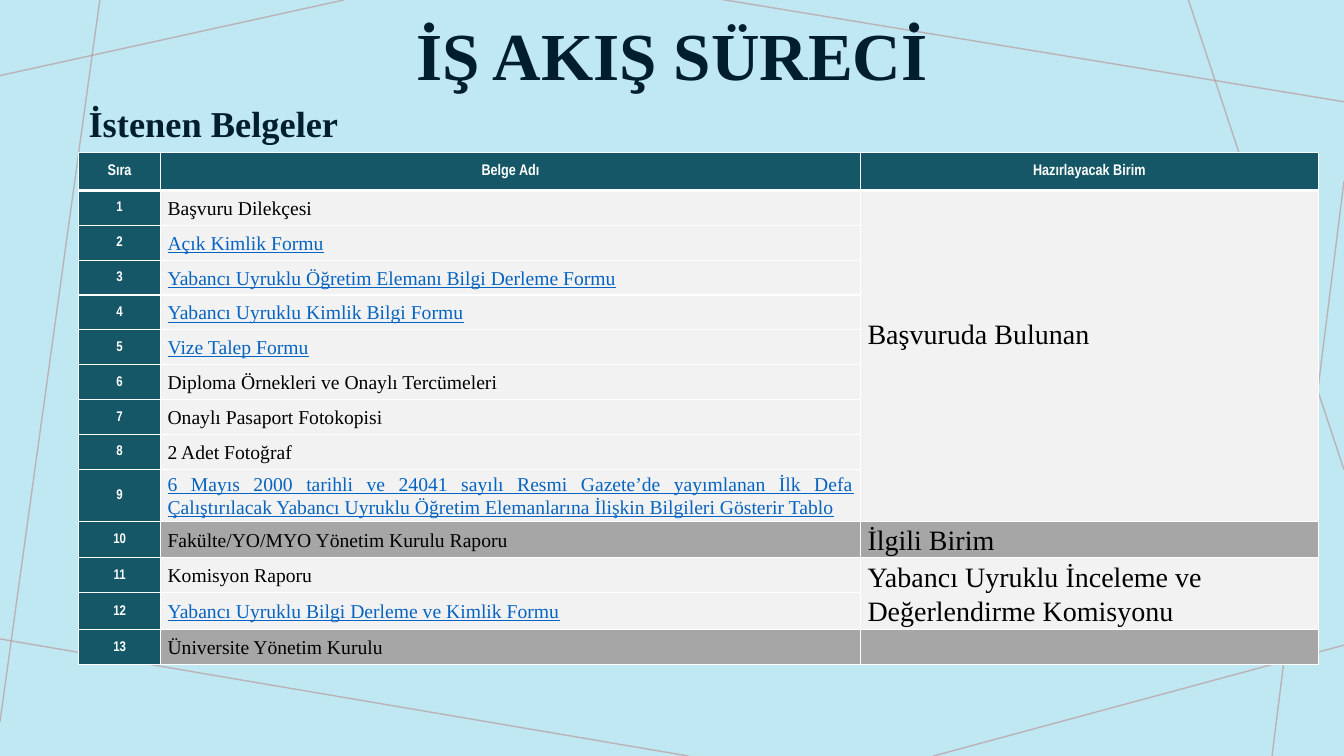
from lxml import etree
from pptx import Presentation
from pptx.dml.color import RGBColor
from pptx.enum.shapes import MSO_CONNECTOR
from pptx.enum.text import MSO_ANCHOR, MSO_AUTO_SIZE, PP_ALIGN
from pptx.oxml.ns import qn
from pptx.util import Pt

STRAIGHT = MSO_CONNECTOR.STRAIGHT
MIDDLE = MSO_ANCHOR.MIDDLE
LEFT, CENTER, JUSTIFY = PP_ALIGN.LEFT, PP_ALIGN.CENTER, PP_ALIGN.JUSTIFY
SERIF, NARROW = "Times New Roman", "Arial Narrow"
SKY, NAVY, TEAL, MAUVE = "BFE8F2", "001E2E", "155767", "BA9CA0"
WHITE, BLACK, LINK_BLUE = "FFFFFF", "000000", "0563C1"
PALE, GREY = "F2F2F2", "A6A6A6"

HEADING = "İŞ AKIŞ SÜRECİ"
SUBHEADING = "İstenen Belgeler"
HEADERS = ["Sıra", "Belge Adı", "Hazırlayacak Birim"]
DOCUMENTS = [
    ("Başvuru Dilekçesi", BLACK),
    ("Açık Kimlik Formu", LINK_BLUE),
    ("Yabancı Uyruklu Öğretim Elemanı Bilgi Derleme Formu", LINK_BLUE),
    ("Yabancı Uyruklu Kimlik Bilgi Formu", LINK_BLUE),
    ("Vize Talep Formu", LINK_BLUE),
    ("Diploma Örnekleri ve Onaylı Tercümeleri", BLACK),
    ("Onaylı Pasaport Fotokopisi", BLACK),
    ("2 Adet Fotoğraf", BLACK),
    ("6 Mayıs 2000 tarihli ve 24041 sayılı Resmi Gazete’de yayımlanan İlk Defa "
     "Çalıştırılacak Yabancı Uyruklu Öğretim Elemanlarına İlişkin Bilgileri "
     "Gösterir Tablo", LINK_BLUE),
    ("Fakülte/YO/MYO Yönetim Kurulu Raporu", BLACK),
    ("Komisyon Raporu", BLACK),
    ("Yabancı Uyruklu Bilgi Derleme ve Kimlik Formu", LINK_BLUE),
    ("Üniversite Yönetim Kurulu", BLACK),
]
UNITS = [
    (1, 9, "Başvuruda Bulunan", PALE),
    (10, 10, "İlgili Birim", GREY),
    (11, 12, "Yabancı Uyruklu İnceleme ve Değerlendirme Komisyonu", PALE),
    (13, 13, "", GREY),
]
LONG_ROW = 9
APPLICANT_LIFT = 32
COLUMN_WIDTHS = [58.5, 500, 327]
ROW_HEIGHT = 24.9
SPECIAL_HEIGHTS = {0: 27.4, LONG_ROW: 37.6, 12: 25.9}
BACKDROP_LINES = [
    (245.5, 0, 0, 54),
    (71.3, 0, 0, 515.5),
    (491.8, 540, -3.6, 455.8),
    (960, 460.8, 666.7, 540),
    (960, 129.6, 908.6, 540),
    (960, 335.5, 848.9, 0),
    (960, 72.7, 514, -0.7),
]


def rgb(value):
    return RGBColor.from_string(value)


def style(paragraph, font_name, size, color, bold=False, align=LEFT):
    paragraph.alignment = align
    font = paragraph.font
    font.name, font.size, font.bold = font_name, Pt(size), bold
    font.color.rgb = rgb(color)


def add_borders(cell, bottom):
    properties = cell._tc.get_or_add_tcPr()
    for index, (side, width) in enumerate(
            [("lnL", 1), ("lnR", 1), ("lnT", 1), ("lnB", bottom)]):
        border = etree.Element(qn(f"a:{side}"), w=str(Pt(width)))
        fill = etree.SubElement(border, qn("a:solidFill"))
        etree.SubElement(fill, qn("a:srgbClr"), val=WHITE)
        properties.insert(index, border)


def fill_cell(cell, text, background, font_name, size, color,
              bold=False, align=LEFT, bottom=1):
    cell.fill.solid()
    cell.fill.fore_color.rgb = rgb(background)
    add_borders(cell, bottom)
    cell.vertical_anchor = MIDDLE
    cell.margin_left = cell.margin_right = Pt(5)
    cell.margin_top = cell.margin_bottom = 0
    cell.text = text
    paragraph = cell.text_frame.paragraphs[0]
    style(paragraph, font_name, size, color, bold, align)
    paragraph.line_spacing = 1.07
    paragraph.space_after = Pt(8)
    if color == LINK_BLUE:
        paragraph.font.underline = True


deck = Presentation()
deck.slide_width, deck.slide_height = Pt(960), Pt(540)
slide = deck.slides.add_slide(deck.slide_layouts[5])
slide.background.fill.solid()
slide.background.fill.fore_color.rgb = rgb(SKY)

for ends in BACKDROP_LINES:
    line = slide.shapes.add_connector(STRAIGHT, *map(Pt, ends))
    line.line.width = Pt(1)
    line.line.color.rgb = rgb(MAUVE)
    properties = line._element.spPr
    etree.SubElement(next(properties.iter(qn("a:srgbClr"))), qn("a:alpha"), val="70000")
    etree.SubElement(properties, qn("a:effectLst"))

title = slide.shapes.title
title._element.getparent().append(title._element)
title.left, title.top, title.width, title.height = Pt(90), Pt(4.3), Pt(780), Pt(75.6)
title.text = HEADING
title.text_frame.auto_size = MSO_AUTO_SIZE.NONE
title.text_frame.vertical_anchor = MIDDLE
style(title.text_frame.paragraphs[0], SERIF, 48, NAVY, True, CENTER)
title.text_frame.paragraphs[0].line_spacing = 0.9

subtitle = slide.shapes.add_textbox(Pt(56.2), Pt(69), Pt(903.8), Pt(440))
subtitle.text_frame.word_wrap = True
subtitle.text_frame.text = SUBHEADING
style(subtitle.text_frame.paragraphs[0], SERIF, 26, NAVY, True)

heights = [SPECIAL_HEIGHTS.get(row, ROW_HEIGHT) for row in range(len(DOCUMENTS) + 1)]
documents_table = slide.shapes.add_table(
    len(heights), len(HEADERS), Pt(56.2), Pt(108.7),
    Pt(sum(COLUMN_WIDTHS)), Pt(sum(heights))).table
for column, width in zip(documents_table.columns, COLUMN_WIDTHS):
    column.width = Pt(width)
for row, height in zip(documents_table.rows, heights):
    row.height = Pt(height)

for column, header in enumerate(HEADERS):
    fill_cell(documents_table.cell(0, column), header, TEAL, NARROW, 11, WHITE,
              True, CENTER, bottom=3)

for first, last, unit, background in UNITS:
    for number in range(first, last + 1):
        document, color = DOCUMENTS[number - 1]
        fill_cell(documents_table.cell(number, 0), str(number), TEAL, NARROW, 10,
                  WHITE, True, CENTER)
        fill_cell(documents_table.cell(number, 1), document, background, SERIF, 14,
                  color, align=JUSTIFY if number == LONG_ROW else LEFT)
        fill_cell(documents_table.cell(number, 2), unit if number == first else "",
                  background, SERIF, 20, BLACK)
    if last > first:
        documents_table.cell(first, 2).merge(documents_table.cell(last, 2))
documents_table.cell(1, 2).margin_bottom = Pt(APPLICANT_LIFT)

deck.save("out.pptx")
